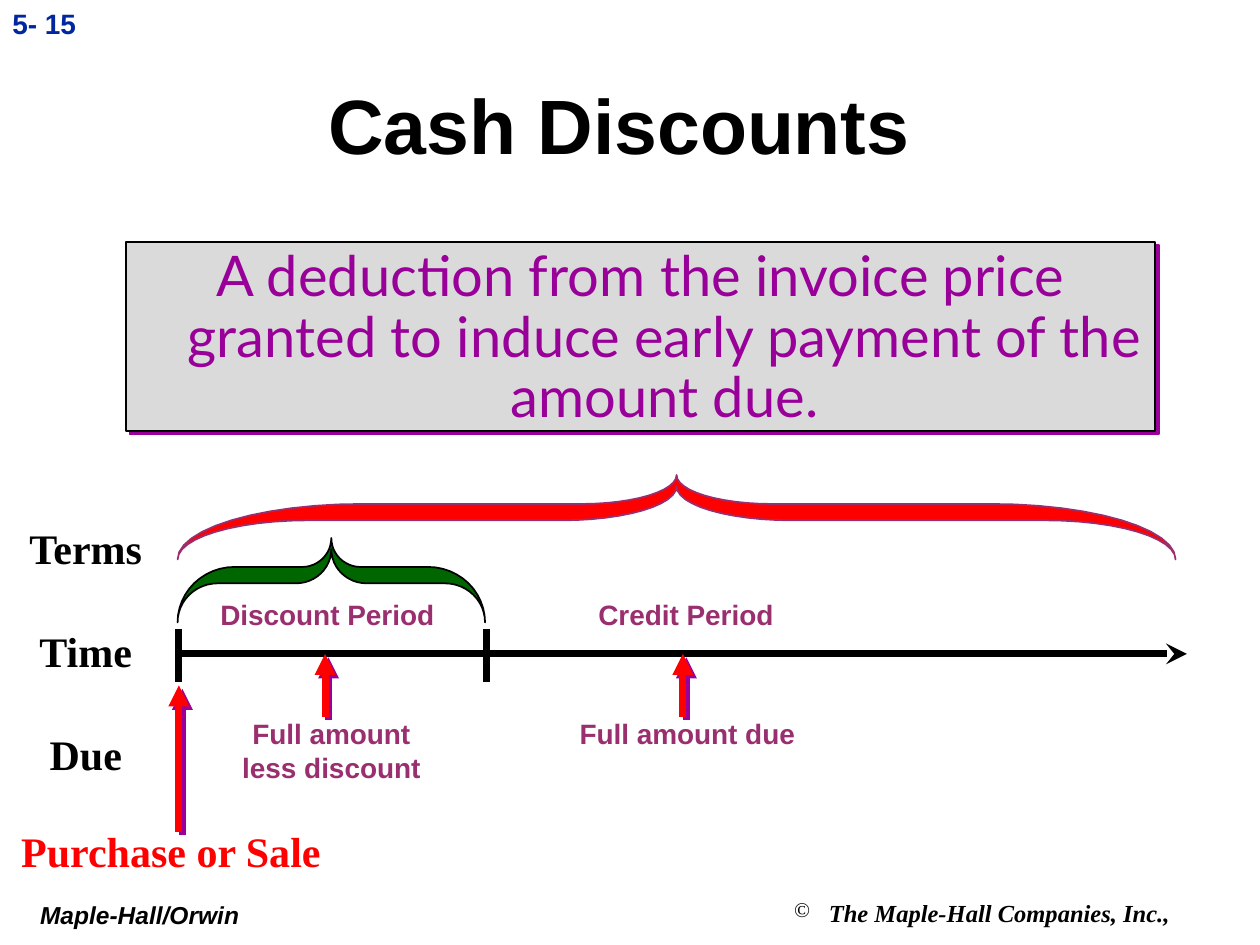
from math import cos, pi, sin

from lxml import etree
from pptx import Presentation
from pptx.dml.color import RGBColor
from pptx.enum.shapes import MSO_CONNECTOR, MSO_SHAPE
from pptx.enum.text import MSO_ANCHOR, PP_ALIGN
from pptx.oxml.ns import qn
from pptx.util import Inches, Pt

BLACK = RGBColor(0x00, 0x00, 0x00)
NAVY = RGBColor(0x00, 0x27, 0x9F)
GREY = RGBColor(0xDA, 0xDA, 0xDA)
PURPLE = RGBColor(0x99, 0x00, 0x99)
PLUM = RGBColor(0x9A, 0x2F, 0x6F)
RED = RGBColor(0xFF, 0x00, 0x00)
GREEN = RGBColor(0x00, 0x66, 0x00)
LEFT, CENTER = PP_ALIGN.LEFT, PP_ALIGN.CENTER
MIDDLE = MSO_ANCHOR.MIDDLE
STRAIGHT = MSO_CONNECTOR.STRAIGHT
RECTANGLE = MSO_SHAPE.RECTANGLE
SANS, SERIF = "Arial", "Times New Roman"


def quarter_arc(start, end, vertical_first, steps=12):
    """Points of a quarter ellipse that leaves start vertically or horizontally."""
    (x0, y0), (x1, y1) = start, end
    points = []
    for step in range(steps + 1):
        turn = step / steps * pi / 2
        early, late = sin(turn), 1 - cos(turn)
        across, down = (late, early) if vertical_first else (early, late)
        points.append((x0 + (x1 - x0) * across, y0 + (y1 - y0) * down))
    return points


def brace_half():
    """Right half of a brace: x in half widths from the tip, y in inches."""
    return (quarter_arc((0, 0), (0.19, 0.23), True)
            + quarter_arc((0.63, 0.23), (1, 0.67), False)
            + quarter_arc((1, 0.67), (0.74, 0.36), True)
            + quarter_arc((0.23, 0.36), (0, 0.09), False))


class SlideBuilder:
    def __init__(self, slide):
        self.slide = slide
        self.shapes = slide.shapes

    def style_font(self, font, size, color, name, bold=True, italic=False):
        font.size, font.name = Pt(size), name
        font.bold, font.italic = bold, italic
        font.color.rgb = color

    def text(self, box, lines, size, color, name=SANS, align=LEFT, wrap=False,
             anchor=None, italic=False, gap=0):
        left, top, width, height = map(Inches, box)
        frame = self.shapes.add_textbox(left, top, width, height).text_frame
        frame.word_wrap = wrap
        if anchor is not None:
            frame.vertical_anchor = anchor
        for index, line in enumerate(lines):
            paragraph = frame.add_paragraph() if index else frame.paragraphs[0]
            paragraph.text = line
            paragraph.alignment = align
            if index:
                paragraph.space_before = Pt(gap)
            self.style_font(paragraph.font, size, color, name, italic=italic)
        return frame

    def shadow(self, shape):
        """Give a hard purple shadow down to the right."""
        effects = etree.SubElement(shape._element.spPr, qn("a:effectLst"))
        outer = etree.SubElement(effects, qn("a:outerShdw"), dist=str(Pt(2.8)),
                                 dir="2700000", algn="ctr", rotWithShape="0")
        etree.SubElement(outer, qn("a:srgbClr"), val=str(PURPLE))

    def definition(self, box, words):
        left, top, width, height = map(Inches, box)
        panel = self.shapes.add_shape(RECTANGLE, left, top, width, height)
        panel.fill.solid()
        panel.fill.fore_color.rgb = GREY
        panel.line.color.rgb = BLACK
        panel.line.width = Pt(1)
        self.shadow(panel)
        frame = panel.text_frame
        frame.word_wrap = True
        frame.vertical_anchor = MSO_ANCHOR.TOP
        paragraph = frame.paragraphs[0]
        paragraph.text = words
        paragraph.alignment = CENTER
        paragraph.line_spacing = 0.9
        properties = paragraph._p.get_or_add_pPr()
        properties.set("marL", str(Inches(0.38)))
        properties.set("indent", str(Inches(-0.38)))
        self.style_font(paragraph.font, 32, PURPLE, "Lato", bold=False)

    def line(self, start, end, color=BLACK, head=None, shadowed=False):
        connector = self.shapes.add_connector(
            STRAIGHT, *map(Inches, start), *map(Inches, end))
        connector.line.color.rgb = color
        connector.line.width = Pt(4)
        if head:
            etree.SubElement(connector.line._get_or_add_ln(),
                             qn("a:tailEnd"), type=head)
        if shadowed:
            self.shadow(connector)
        else:
            etree.SubElement(connector._element.spPr, qn("a:effectLst"))

    def brace(self, tip_x, tip_y, half_width, fill, outline):
        right = brace_half()
        left = [(-x, y) for x, y in reversed(right)]
        points = [(Inches(tip_x + x * half_width), Inches(tip_y + y))
                  for x, y in right + left]
        builder = self.shapes.build_freeform(*points[0])
        builder.add_line_segments(points[1:], close=True)
        brace = builder.convert_to_shape()
        brace.shadow.inherit = False
        brace.fill.solid()
        brace.fill.fore_color.rgb = fill
        brace.line.color.rgb = outline
        brace.line.width = Pt(1)

    def copyright(self, box, owner):
        frame = self.text(box, [" "], 12, BLACK, "TeX Gyre Pagella", CENTER,
                          wrap=True, italic=True)
        paragraph = frame.paragraphs[0]
        etree.SubElement(paragraph._p.get_or_add_pPr(), qn("a:buChar"), char="©")
        # The bullet must come before the default run properties.
        properties = paragraph._p.pPr
        properties.insert(0, properties[-1])
        self.style_font(paragraph.runs[0].font, 12, BLACK, "TeX Gyre Pagella",
                        italic=True)
        run = paragraph.add_run()
        run.text = owner
        self.style_font(run.font, 14, BLACK, SERIF, italic=True)


def main():
    presentation = Presentation()
    presentation.slide_width = Inches(10)
    presentation.slide_height = Inches(7.5)
    page = SlideBuilder(
        presentation.slides.add_slide(presentation.slide_layouts[6]))

    page.text((0.22, 7.09, 1.86, 0.33), ["Maple-Hall/Orwin"], 14, BLACK,
              italic=True)
    page.copyright((5.83, 7.08, 4.08, 0.33), "The Maple-Hall Companies, Inc., ")
    page.text((0, 0, 0.83, 0.5), ["5- 15"], 16, NAVY)
    page.text((0.58, 0.38, 8.67, 1.21), ["Cash Discounts"], 44, BLACK,
              align=CENTER, wrap=True, anchor=MIDDLE)
    page.definition((1, 1.92, 8.17, 1.5),
                    "A deduction from the invoice price granted to induce "
                    "early payment of the amount due.")

    purchase_x, discount_end_x, axis_y = 1.42, 3.86, 5.19
    page.line((purchase_x, axis_y), (9.42, axis_y), head="stealth")
    for tick_x in (purchase_x, discount_end_x):
        page.line((tick_x, 4.99), (tick_x, 5.41))
    page.text((0.12, 4.1, 1.12, 2.09), ["Terms", "Time", "Due"], 24, BLACK,
              SERIF, CENTER, gap=30)

    page.brace(2.63, 4.27, 1.22, GREEN, BLACK)
    page.brace(5.37, 3.77, 3.96, RED, PLUM)

    for box, lines, align in (
            ((1.65, 4.69, 1.9, 0.36), ["Discount Period"], LEFT),
            ((4.65, 4.69, 1.59, 0.36), ["Credit Period"], LEFT),
            ((1.82, 5.64, 1.62, 0.63), ["Full amount", "less discount"], CENTER),
            ((4.5, 5.64, 1.91, 0.36), ["Full amount due"], CENTER)):
        page.text(box, lines, 16, PLUM, align=align)

    page.text((0.07, 6.5, 2.59, 0.5), ["Purchase or Sale"], 24, RED, SERIF)
    for x, bottom, top in ((5.42, 5.69, axis_y), (2.58, 5.69, axis_y),
                           (purchase_x, 6.6, 5.44)):
        page.line((x, bottom), (x, top), RED, "triangle", shadowed=True)

    presentation.save("out.pptx")


if __name__ == "__main__":
    main()
